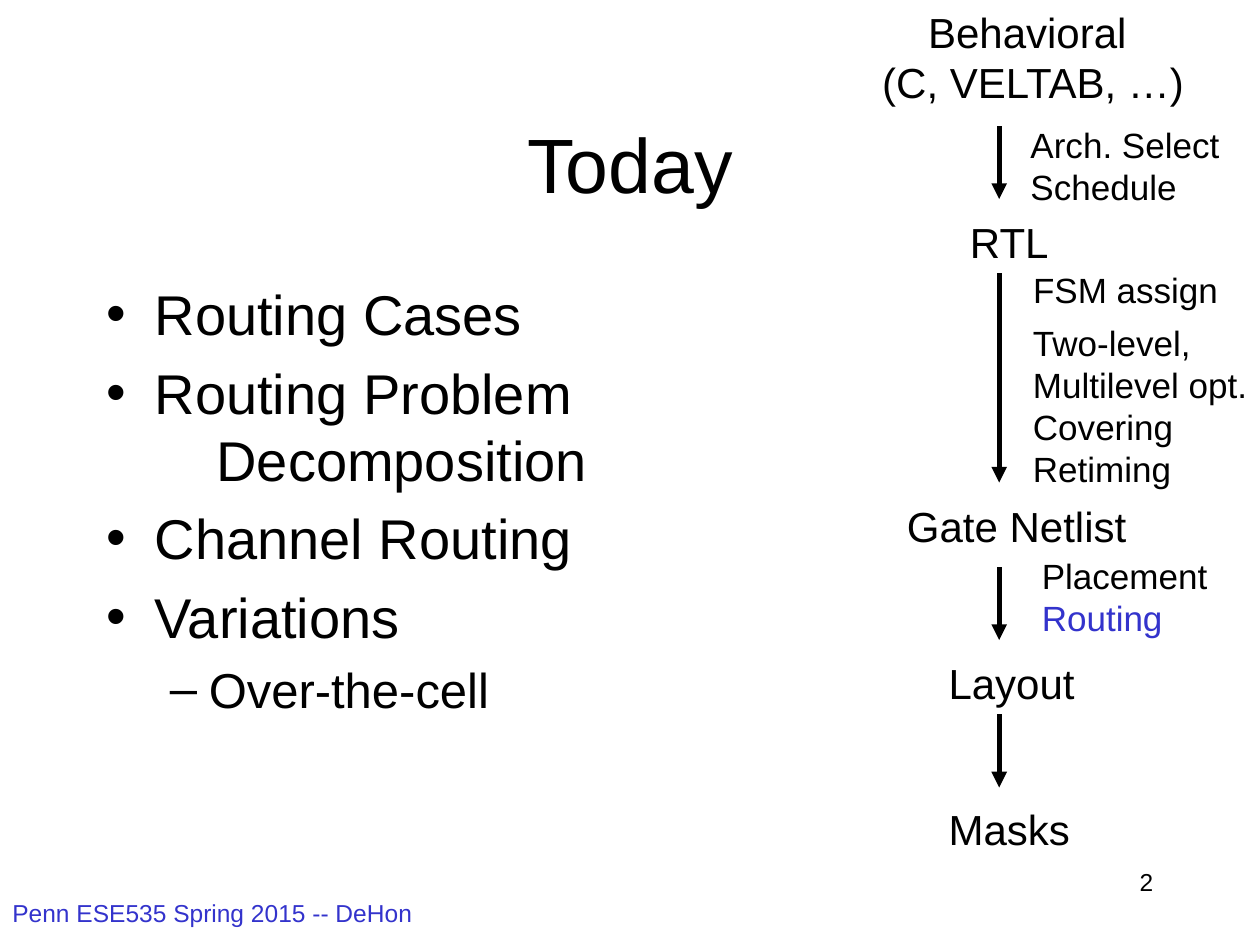
from dataclasses import dataclass

from lxml import etree
from pptx import Presentation
from pptx.dml.color import RGBColor
from pptx.enum.shapes import MSO_CONNECTOR
from pptx.enum.text import MSO_ANCHOR, PP_ALIGN
from pptx.oxml.ns import qn
from pptx.util import Inches, Pt

LEFT, CENTER, RIGHT = PP_ALIGN.LEFT, PP_ALIGN.CENTER, PP_ALIGN.RIGHT
MIDDLE = MSO_ANCHOR.MIDDLE
STRAIGHT = MSO_CONNECTOR.STRAIGHT


@dataclass(frozen=True)
class Theme:
    font: str = "Arial"
    black: RGBColor = RGBColor(0x00, 0x00, 0x00)
    blue: RGBColor = RGBColor(0x33, 0x33, 0xCC)
    title: int = 44
    bullet: int = 32
    sub_bullet: int = 28
    stage: int = 24
    step: int = 20
    small: int = 14


THEME = Theme()


def style(para, size, color=THEME.black, align=LEFT):
    para.alignment = align
    para.font.name = THEME.font
    para.font.size = Pt(size)
    para.font.color.rgb = color


def add_text(page, place, lines, size, color=THEME.black, align=LEFT, wrap=False):
    """Add a text box with one paragraph per line and return its paragraphs."""
    box = page.shapes.add_textbox(*(Inches(value) for value in place))
    frame = box.text_frame
    frame.word_wrap = wrap
    frame.text = "\n".join(lines)
    for para in frame.paragraphs:
        style(para, size, color, align)
    return frame.paragraphs


deck = Presentation()
deck.slide_width, deck.slide_height = Inches(10), Inches(7.5)
page = deck.slides.add_slide(deck.slide_layouts[5])

# Title, footer and page number
title = page.shapes.title
title.left, title.top = Inches(0.75), Inches(0.67)
title.width, title.height = Inches(8.5), Inches(1.25)
title.text_frame.text = "Today"
title.text_frame.vertical_anchor = MIDDLE
style(title.text_frame.paragraphs[0], THEME.title, align=CENTER)

add_text(page, (0, 7.08, 3.83, 0.42), ["Penn ESE535 Spring 2015 -- DeHon"],
         THEME.small, THEME.blue, wrap=True)
add_text(page, (7.17, 6.83, 2.08, 0.5), ["2"], THEME.small, align=RIGHT, wrap=True)

# Agenda: text, level, bullet, left margin, first-line indent
agenda = [
    ("Routing Cases", 0, "•", 0.38, -0.38),
    ("Routing Problem", 0, "•", 0.38, -0.38),
    ("Decomposition", 0, None, 0.87, 0),
    ("Channel Routing", 0, "•", 0.38, -0.38),
    ("Variations", 0, "•", 0.38, -0.38),
    ("Over-the-cell", 1, "–", 0.81, -0.31),
]
paras = add_text(page, (0.75, 2.17, 8.5, 4.5), [item[0] for item in agenda],
                 THEME.bullet, wrap=True)
for para, (_, level, bullet, margin, indent) in zip(paras, agenda):
    size = THEME.sub_bullet if level else THEME.bullet
    para.level = level
    para.font.size = Pt(size)
    para.space_before = Pt(0.2 * size if bullet else 0)
    props = para._p.get_or_add_pPr()
    props.set("marL", str(Inches(margin)))
    props.set("indent", str(Inches(indent)))
    if bullet:
        marks = [etree.Element(qn("a:buFont"), typeface=THEME.font),
                 etree.Element(qn("a:buChar"), char=bullet)]
    else:
        marks = [etree.Element(qn("a:buNone"))]
    for mark in marks:
        props.insert_element_before(mark, "a:tabLst", "a:defRPr", "a:extLst")

# Design flow stages
stages = [
    ((6.85, 0, 2.7, 0.9), ["Behavioral ", "(C, VELTAB, …)"], CENTER),
    ((7.6, 1.67, 0.83, 0.5), ["RTL"], LEFT),
    ((7.1, 3.92, 1.94, 0.5), ["Gate Netlist"], LEFT),
    ((7.43, 5.17, 1.2, 0.5), ["Layout"], LEFT),
    ((7.43, 6.33, 1.16, 0.5), ["Masks"], LEFT),
]
for place, lines, align in stages:
    add_text(page, place, lines, THEME.stage, align=align)

# Arrows between the stages
ARROW_X = Inches(7.93)
for start, end in [(1, 1.58), (2.17, 3.83), (4.5, 5.08), (5.67, 6.25)]:
    arrow = page.shapes.add_connector(
        STRAIGHT, ARROW_X, Inches(start), ARROW_X, Inches(end))
    arrow.line.color.rgb = THEME.black
    arrow.line.width = Pt(3)
    etree.SubElement(arrow.line._get_or_add_ln(), qn("a:tailEnd"), type="triangle")
    etree.SubElement(arrow._element.spPr, qn("a:effectLst"))

# Steps beside the arrows
steps = [
    ((8.08, 0.93, 1.72, 0.77), ["Arch. Select", "Schedule"]),
    ((8.1, 2.08, 1.68, 0.43), ["FSM assign"]),
    ((8.1, 2.5, 1.9, 1.43),
     ["Two-level,", "Multilevel opt.", "Covering", "Retiming"]),
    ((8.17, 4.35, 1.54, 0.77), ["Placement", "Routing"]),
]
for place, lines in steps:
    for para in add_text(page, place, lines, THEME.step):
        if para.text == "Routing":
            para.font.color.rgb = THEME.blue

deck.save("out.pptx")
